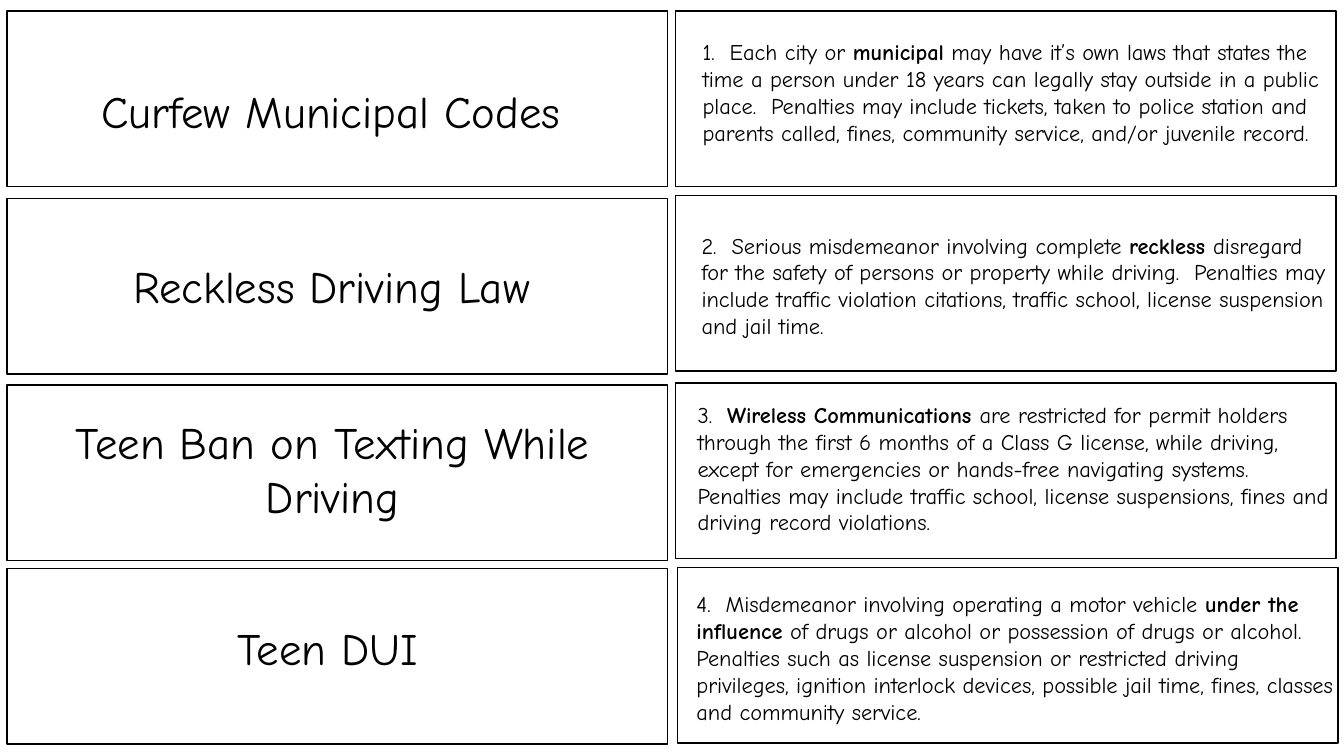
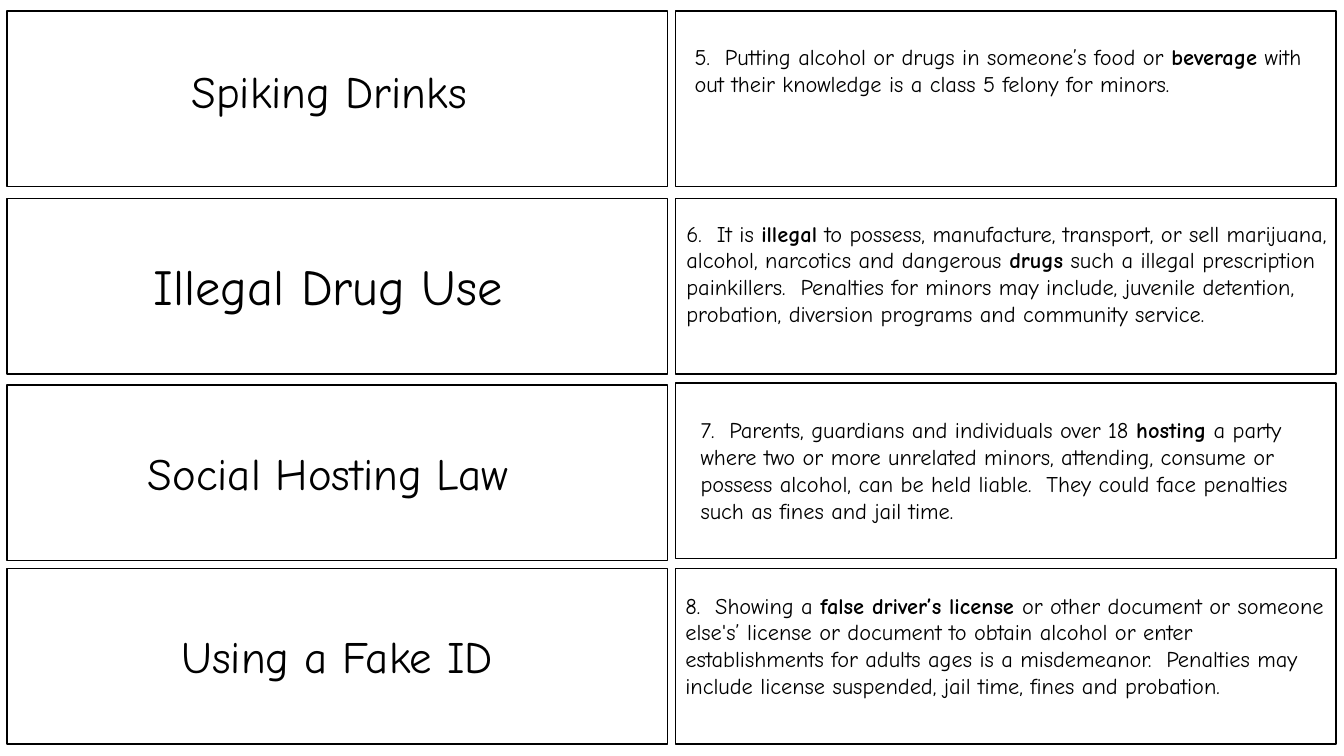
from dataclasses import dataclass

from pptx import Presentation
from pptx.dml.color import RGBColor
from pptx.enum.shapes import MSO_SHAPE
from pptx.enum.text import MSO_ANCHOR, MSO_AUTO_SIZE, PP_ALIGN
from pptx.util import Inches, Pt

COLOURS = {"paper": "FFFFFF", "ink": "000000"}
FONT = "Comic Neue"
LINE_SPACING = 1.22
INSET = 0.05

# Card grid, in inches
COLUMN_LEFTS = (0.07, 6.7)
ROW_TOPS = (0.11, 1.97, 3.82, 5.64)
CARD_WIDTH, CARD_HEIGHT = 6.55, 1.74


@dataclass(frozen=True)
class Label:
    """Text in a card, placed from its grid cell's corner; *stars* mark bold."""
    text: str
    left: float
    top: float
    width: float
    lines: int
    size: int
    align: PP_ALIGN


@dataclass(frozen=True)
class Pair:
    """One row: the term, its definition, and the definition frame's offset."""
    term: Label
    definition: Label
    shift: tuple[float, float] = (0, 0)


def term(text: str, left: float, top: float, width: float,
         lines: int = 1, size: int = 32) -> Label:
    return Label(text, left, top, width, lines, size, PP_ALIGN.CENTER)


def definition(text: str, left: float, top: float, width: float = 6.46,
               lines: int = 5) -> Label:
    return Label(text, left, top, width, lines, 16, PP_ALIGN.LEFT)


PAGES = (
    (
        Pair(term("Curfew Municipal Codes", 0.02, 0.67, 6.39),
             definition("1.  Each city or *municipal* may have it’s own laws that states "
                        "the time a person under 18 years can legally stay outside in a "
                        "public place.  Penalties may include tickets, taken to police "
                        "station and parents called, fines, community service, and/or "
                        "juvenile record.", 0.17, 0.22)),
        Pair(term("Reckless Driving Law", 0.44, 0.55, 5.56),
             definition("2.  Serious misdemeanor involving complete *reckless *disregard "
                        "for the safety of persons or property while driving.  Penalties "
                        "may include traffic violation citations, traffic school, license "
                        "suspension and jail time.", 0.16, 0.28, lines=4),
             shift=(0, -0.03)),
        Pair(term("Teen Ban on Texting While Driving", 0.31, 0.25, 5.84, lines=2),
             definition("3.  *Wireless Communications *are restricted for permit holders "
                        "through the first 6 months of a Class G license, while driving, "
                        "except for emergencies or hands-free navigating systems.  "
                        "Penalties may include traffic school, license suspensions, fines "
                        "and driving record violations.", 0.12, 0.11),
             shift=(0, -0.02)),
        Pair(term("Teen DUI", 0.22, 0.47, 5.92),
             definition("4.  Misdemeanor involving operating a motor vehicle *under the "
                        "influence* of drugs or alcohol or possession of drugs or "
                        "alcohol.  Penalties such as license suspension or restricted "
                        "driving privileges, ignition interlock devices, possible jail "
                        "time, fines, classes and community service.", 0.11, 0.17, 6.56),
             shift=(0.02, -0.01)),
    ),
    (
        Pair(term("Spiking Drinks", 0, 0.47, 6.39),
             definition("5.  Putting alcohol or drugs in someone’s food or *beverage* "
                        "with out their knowledge is a class 5 felony for minors.",
                        0.09, 0.27, lines=2)),
        Pair(term("Illegal Drug Use", 0.39, 0.51, 5.59, size=36),
             definition("6.  It is *illegal* to possess, manufacture, transport, or sell "
                        "marijuana, alcohol, narcotics and dangerous *drugs* such a "
                        "illegal prescription painkillers.  Penalties for minors may "
                        "include, juvenile detention, probation, diversion programs and "
                        "community service.", 0.01, 0.16, 6.56)),
        Pair(term("Social Hosting Law", 0.23, 0.55, 5.91),
             definition("7.  Parents, guardians and individuals over 18 *hosting* a party "
                        "where two or more unrelated minors, attending, consume or "
                        "possess alcohol, can be held liable.  They could face penalties "
                        "such as fines and jail time.", 0.15, 0.26, 6.27, lines=4),
             shift=(0, -0.02)),
        Pair(term("Using a Fake ID", 0.27, 0.55, 6.01),
             definition("8.  Showing a *false driver’s license *or other document or "
                        "someone else's’ license or document to obtain alcohol or enter "
                        "establishments for adults ages is a misdemeanor.  Penalties may "
                        "include license suspended, jail time, fines and probation.",
                        0, 0.18, 6.54)),
    ),
)


def colour(name: str) -> RGBColor:
    return RGBColor.from_string(COLOURS[name])


def draw_frame(page, left: float, top: float) -> None:
    frame = page.shapes.add_shape(MSO_SHAPE.RECTANGLE, Inches(left), Inches(top),
                                  Inches(CARD_WIDTH), Inches(CARD_HEIGHT))
    frame.shadow.inherit = False
    frame.fill.solid()
    frame.fill.fore_color.rgb = colour("paper")
    frame.line.color.rgb = colour("ink")
    frame.line.width = Pt(1)


def draw_label(page, label: Label, cell_left: float, cell_top: float) -> None:
    height = 2 * INSET + label.lines * label.size * LINE_SPACING / 72
    box = page.shapes.add_textbox(Inches(cell_left + label.left),
                                  Inches(cell_top + label.top),
                                  Inches(label.width), Inches(height))
    frame = box.text_frame
    frame.word_wrap = True
    frame.auto_size = MSO_AUTO_SIZE.SHAPE_TO_FIT_TEXT
    frame.vertical_anchor = MSO_ANCHOR.TOP
    frame.margin_top = frame.margin_bottom = Inches(INSET)
    para = frame.paragraphs[0]
    para.alignment = label.align
    for position, words in enumerate(label.text.split("*")):
        span = para.add_run()
        span.text = words
        span.font.name = FONT
        span.font.size = Pt(label.size)
        span.font.bold = position % 2 == 1
        span.font.color.rgb = colour("ink")


def draw_pair(page, pair: Pair, top: float) -> None:
    term_left, definition_left = COLUMN_LEFTS
    shift_x, shift_y = pair.shift
    draw_frame(page, term_left, top)
    draw_frame(page, definition_left + shift_x, top + shift_y)
    draw_label(page, pair.term, term_left, top)
    draw_label(page, pair.definition, definition_left, top)


def main() -> None:
    deck = Presentation()
    deck.slide_width, deck.slide_height = Inches(13.33), Inches(7.5)
    for pairs in PAGES:
        page = deck.slides.add_slide(deck.slide_layouts[6])
        for pair, top in zip(pairs, ROW_TOPS):
            draw_pair(page, pair, top)
    deck.save("out.pptx")


if __name__ == "__main__":
    main()
